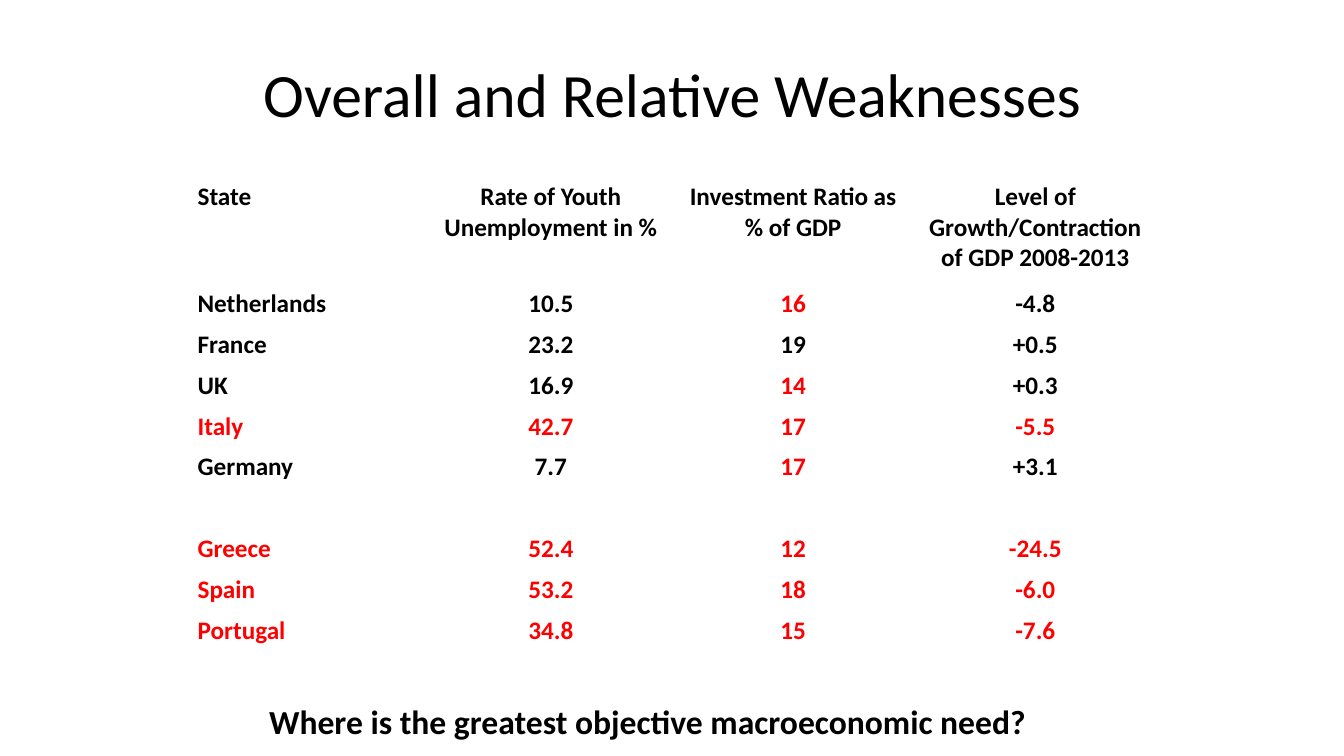
from pptx import Presentation
from pptx.dml.color import RGBColor
from pptx.enum.text import MSO_ANCHOR, PP_ALIGN
from pptx.util import Inches, Pt

LEFT, CENTER = PP_ALIGN.LEFT, PP_ALIGN.CENTER
TOP, MIDDLE = MSO_ANCHOR.TOP, MSO_ANCHOR.MIDDLE
BLACK = RGBColor(0, 0, 0)
RED = RGBColor(255, 0, 0)
FONT = "Calibri"

HEADS = ["State", "Rate of Youth Unemployment in %",
         "Investment Ratio as % of GDP",
         "Level of Growth/Contraction of GDP 2008-2013"]
LARGE = [
    ["Netherlands", "10.5", "16", "-4.8"],
    ["France", "23.2", "19", "+0.5"],
    ["UK", "16.9", "14", "+0.3"],
    ["Italy", "42.7", "17", "-5.5"],
    ["Germany", "7.7", "17", "+3.1"],
]
SMALL = [
    ["Greece", "52.4", "12", "-24.5"],
    ["Spain", "53.2", "18", "-6.0"],
    ["Portugal", "34.8", "15", "-7.6"],
]
GAP = [""] * len(HEADS)
WEAK = {"Italy", "Greece", "Spain", "Portugal"}  # red in every column
RATIO = 2       # column of the investment ratio
LOW_RATIO = 19  # ratios below this are red


def write(frame, text, size, bold=False, color=BLACK, align=LEFT):
    frame.text = text
    para = frame.paragraphs[0]
    para.alignment = align
    for run in para.runs:
        font = run.font
        font.name, font.size, font.bold = FONT, Pt(size), bold
        font.color.rgb = color


def add_label(slide, box, text, size, bold=False, align=LEFT, anchor=TOP):
    frame = slide.shapes.add_textbox(*map(Inches, box)).text_frame
    frame.word_wrap = True
    frame.vertical_anchor = anchor
    write(frame, text, size, bold, align=align)


def pick_color(row, col):
    low = col == RATIO and row[col].isdigit() and int(row[col]) < LOW_RATIO
    return RED if row[0] in WEAK or low else BLACK


def add_grid(slide, box, head_height, row_height):
    rows = [HEADS, *LARGE, GAP, *SMALL]
    table = slide.shapes.add_table(
        len(rows), len(HEADS), *map(Inches, box)).table
    table.first_row = table.horz_banding = False
    for column in table.columns:
        column.width = Inches(box[2] / len(HEADS))
    for r, row in enumerate(rows):
        table.rows[r].height = Inches(row_height if r else head_height)
        for c, text in enumerate(row):
            cell = table.cell(r, c)
            cell.fill.background()
            write(cell.text_frame, text, 18, True, pick_color(row, c),
                  CENTER if c else LEFT)


def build():
    deck = Presentation()
    deck.slide_width, deck.slide_height = Inches(13.33), Inches(7.5)
    slide = deck.slides.add_slide(deck.slide_layouts[6])

    # Title
    add_label(slide, (0.67, 0.3, 12, 1.25), "Overall and Relative Weaknesses",
              44, align=CENTER, anchor=MIDDLE)
    # Table of states
    add_grid(slide, (1.86, 1.75, 9.61, 4.71), 1.06, 0.406)
    # Closing question
    add_label(slide, (2.57, 6.9, 8.58, 0.5),
              "Where is the greatest objective macroeconomic need?", 24, True)

    deck.save("out.pptx")


if __name__ == "__main__":
    build()
